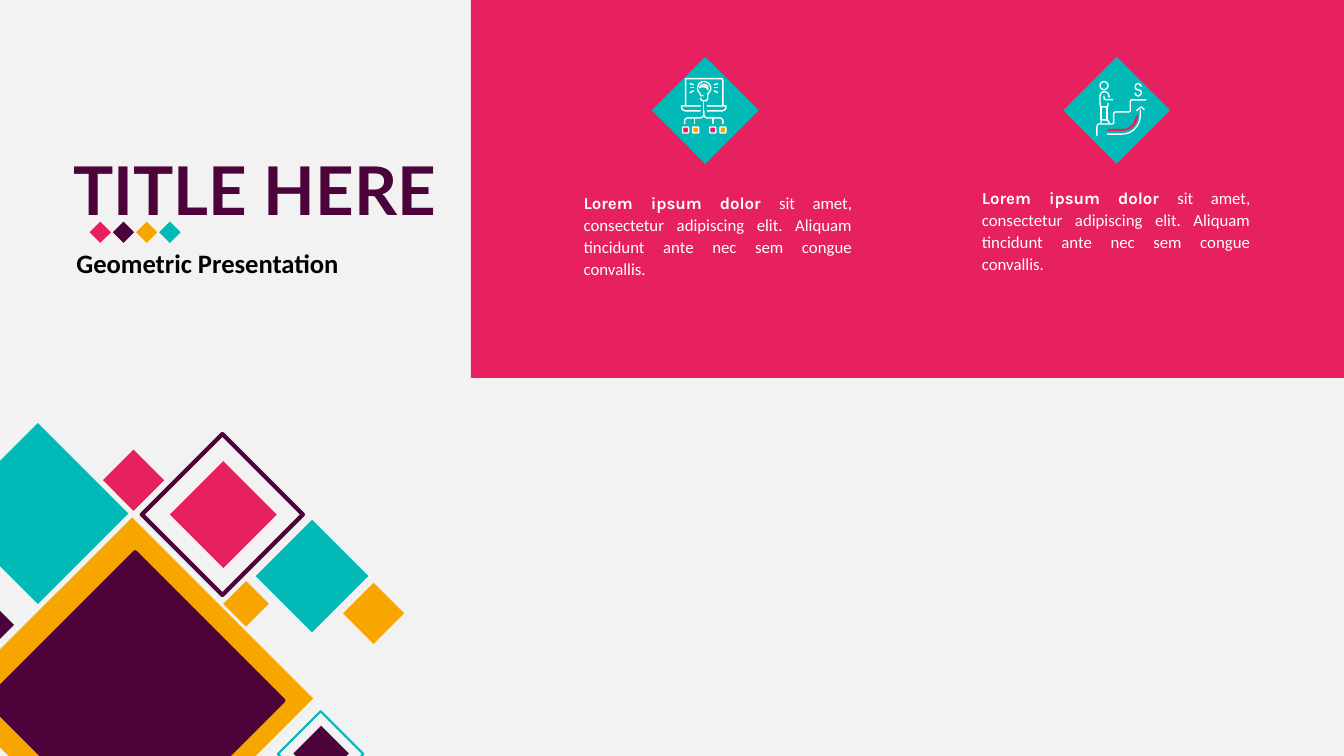
from dataclasses import dataclass
from typing import Optional

from lxml.etree import SubElement
from pptx import Presentation
from pptx.dml.color import RGBColor
from pptx.enum.shapes import MSO_CONNECTOR, MSO_SHAPE
from pptx.enum.text import MSO_AUTO_SIZE, PP_ALIGN
from pptx.oxml.ns import qn
from pptx.util import Inches, Pt

PINK, TEAL, ORANGE, PLUM = "E7205F", "01B9B7", "F7A600", "4C0339"
WHITE, BLACK, PALE = "FFFFFF", "000000", "F2F2F2"
CURVE_STEPS = 8


@dataclass
class Square:
    left: float
    top: float
    size: float
    fill: Optional[str] = None
    line: Optional[str] = None
    width: float = 1


@dataclass
class Stroke:
    """A start point, then (x, y) for lines or (x1, y1, x2, y2, x, y) for curves."""
    steps: list
    closed: bool = False
    fill: Optional[str] = None
    line: Optional[str] = WHITE


@dataclass
class Caption:
    left: float
    top: float


presentation = Presentation()
presentation.slide_width = Inches(13.33)
presentation.slide_height = Inches(7.5)
slide = presentation.slides.add_slide(presentation.slide_layouts[6])
shapes = slide.shapes


def color(value: str) -> RGBColor:
    return RGBColor.from_string(value)


def style(shape, fill: Optional[str], line: Optional[str], width: float = 1) -> None:
    shape.shadow.inherit = False
    if fill:
        shape.fill.solid()
        shape.fill.fore_color.rgb = color(fill)
    else:
        shape.fill.background()
    if line:
        shape.line.color.rgb = color(line)
        shape.line.width = Pt(width)
    else:
        shape.line.fill.background()


def add_preset(kind, left: float, top: float, width: float, height: float,
               fill: Optional[str] = None, line: Optional[str] = None, line_width: float = 1):
    shape = shapes.add_shape(kind, Inches(left), Inches(top), Inches(width), Inches(height))
    style(shape, fill, line, line_width)
    return shape


def add_diamond(square: Square) -> None:
    shape = add_preset(MSO_SHAPE.RECTANGLE, square.left, square.top, square.size, square.size,
                       square.fill, square.line, square.width)
    shape.rotation = 45


def add_line(x1: float, y1: float, x2: float, y2: float) -> None:
    connector = shapes.add_connector(MSO_CONNECTOR.STRAIGHT, Inches(x1), Inches(y1),
                                     Inches(x2), Inches(y2))
    connector.line.color.rgb = color(WHITE)
    connector.line.width = Pt(1)
    SubElement(connector.element.spPr, qn("a:effectLst"))


def add_stroke(stroke: Stroke) -> None:
    points = [stroke.steps[0]]
    for step in stroke.steps[1:]:
        if len(step) == 2:
            points.append(step)
            continue
        controls = [points[-1], step[:2], step[2:4], step[4:]]
        for index in range(1, CURVE_STEPS + 1):
            t = index / CURVE_STEPS
            weights = ((1 - t) ** 3, 3 * t * (1 - t) ** 2, 3 * t * t * (1 - t), t ** 3)
            points.append(tuple(sum(w * c[axis] for w, c in zip(weights, controls))
                                for axis in (0, 1)))
    emu_points = [(Inches(x), Inches(y)) for x, y in points]
    builder = shapes.build_freeform(*emu_points[0])
    builder.add_line_segments(emu_points[1:], close=stroke.closed)
    style(builder.convert_to_shape(), stroke.fill, stroke.line)


def add_text(left: float, top: float, width: float, height: float, wrap: bool):
    frame = shapes.add_textbox(Inches(left), Inches(top), Inches(width), Inches(height)).text_frame
    frame.word_wrap = wrap
    frame.auto_size = MSO_AUTO_SIZE.SHAPE_TO_FIT_TEXT
    return frame.paragraphs[0]


def add_heading(left: float, top: float, width: float, height: float,
                text: str, size: float, font: str, ink: str) -> None:
    paragraph = add_text(left, top, width, height, wrap=False)
    paragraph.text = text
    paragraph.font.name, paragraph.font.size, paragraph.font.bold = font, Pt(size), True
    paragraph.font.color.rgb = color(ink)


def add_caption(caption: Caption) -> None:
    paragraph = add_text(caption.left, caption.top, 2.86, 0.98, wrap=True)
    paragraph.alignment, paragraph.line_spacing = PP_ALIGN.JUSTIFY, 1.1
    paragraph.font.size = Pt(12)
    paragraph.font.color.rgb = color(WHITE)
    for text, font, bold in (
            ("Lorem ipsum dolor ", "Karla", True),
            ("sit amet, consectetur adipiscing elit. Aliquam tincidunt ante nec sem congue "
             "convallis.", "Calibri", False)):
        run = paragraph.add_run()
        run.text, run.font.name, run.font.bold = text, font, bold


def draw_stairs_icon() -> None:
    # Dollar sign
    add_stroke(Stroke([(11.26, 0.92), (11.26, 0.94, 11.27, 0.95, 11.29, 0.95),
                       (11.3, 0.95, 11.32, 0.94, 11.32, 0.92), (11.32, 0.9, 11.31, 0.9, 11.29, 0.89),
                       (11.27, 0.89, 11.26, 0.88, 11.26, 0.86), (11.26, 0.85, 11.27, 0.83, 11.29, 0.83),
                       (11.3, 0.83, 11.32, 0.85, 11.32, 0.86)]))
    for top in (0.82, 0.95):
        add_line(11.29, top, 11.29, top + 0.01)
    # Steps
    for index in range(3):
        x, y = 10.88 + 0.165 * index, 1.35 - 0.12 * index
        add_stroke(Stroke([(x, y), (x, y - 0.09), (x, y - 0.11, x + 0.01, y - 0.12, x + 0.02, y - 0.12),
                           (x + 0.16, y - 0.12)]))
    # Climber
    add_preset(MSO_SHAPE.OVAL, 10.91, 0.81, 0.08, 0.08, line=WHITE)
    for x, bottom in ((10.98, 1.2), (10.92, 1.19)):
        add_line(x, 1.06, x, bottom)
    add_stroke(Stroke([(10.95, 0.95), (10.95, 0.97), (10.95, 0.98, 10.96, 0.99, 10.98, 0.99),
                       (11.04, 0.99)]))
    add_stroke(Stroke([(10.92, 1.23), (10.92, 1.19), (10.97, 1.19), (10.99, 1.19, 11, 1.21, 11, 1.23)]))
    add_stroke(Stroke([(11, 0.97), (11, 0.96), (11, 0.93, 10.98, 0.91, 10.95, 0.91),
                       (10.93, 0.91, 10.91, 0.93, 10.91, 0.96), (10.91, 1),
                       (10.91, 1.02, 10.91, 1.04, 10.92, 1.06), (10.98, 1.06),
                       (10.99, 1.05, 10.99, 1.04, 10.99, 1.02)]))
    # Rising arrow
    add_stroke(Stroke([(11.13, 1.3), (10.98, 1.3), (10.98, 1.29, 10.99, 1.28, 11, 1.28), (11.13, 1.28),
                       (11.2, 1.28, 11.25, 1.23, 11.26, 1.16), (11.27, 1.15, 11.28, 1.14, 11.29, 1.14),
                       (11.29, 1.23, 11.22, 1.3, 11.13, 1.3)], closed=True, fill=PINK, line=None))
    add_stroke(Stroke([(10.98, 1.33), (11.13, 1.33), (11.23, 1.33, 11.31, 1.25, 11.31, 1.14),
                       (11.31, 1.09)]))
    add_stroke(Stroke([(11.27, 1.1), (11.32, 1.06), (11.35, 1.09)]))


def draw_laptop_icon() -> None:
    center = 6.98
    # Bulb
    add_stroke(Stroke([(6.95, 0.97), (6.95, 0.99, 6.96, 1, 6.98, 1), (6.99, 1),
                       (7.01, 1, 7.02, 0.99, 7.02, 0.97), (7.02, 0.95), (7.02, 0.94, 7.02, 0.93, 7.03, 0.92),
                       (7.04, 0.91, 7.05, 0.89, 7.05, 0.88), (7.05, 0.84, 7.02, 0.81, 6.98, 0.81),
                       (6.95, 0.81, 6.92, 0.84, 6.92, 0.87), (6.92, 0.89, 6.92, 0.91, 6.94, 0.92),
                       (6.94, 0.93, 6.95, 0.94, 6.95, 0.95), (6.98, 0.95)]))
    add_stroke(Stroke([(6.97, 0.86), (6.99, 0.86, 7.01, 0.87, 7.02, 0.88), (7.02, 0.89),
                       (7.02, 0.87, 7.02, 0.86, 7.01, 0.85), (7, 0.84, 6.99, 0.84, 6.98, 0.84),
                       (6.96, 0.84, 6.95, 0.85, 6.94, 0.87), (6.95, 0.86, 6.96, 0.86, 6.97, 0.86)],
                      closed=True, fill=ORANGE))
    # Screen
    add_stroke(Stroke([(7.17, 1.05), (7.17, 0.8), (7.17, 0.79, 7.16, 0.78, 7.16, 0.78), (6.81, 0.78),
                       (6.8, 0.78, 6.8, 0.79, 6.8, 0.8), (6.8, 1.05)]))
    add_line(center, 1, center, 1.1)
    # Mirrored rays, keyboard halves and branches
    for side in (-1, 1):
        def x(offset: float) -> float:
            return center + side * offset

        for start, end in ((0.87, 0.87), (0.9, 0.92), (0.84, 0.83)):
            add_line(x(0.1), start, x(0.14), end)
        add_stroke(Stroke([(x(0.03), 1.05), (x(0.22), 1.05), (x(0.22), 1.07),
                           (x(0.22), 1.08, x(0.2), 1.1, x(0.18), 1.1), (x(0.03), 1.1)]))
        add_stroke(Stroke([(center, 1.1), (center, 1.14), (center, 1.15, x(0.02), 1.17, x(0.03), 1.17),
                           (x(0.15), 1.17), (x(0.17), 1.17, x(0.19), 1.18, x(0.19), 1.2),
                           (x(0.19), 1.23)]))
        add_line(x(0.09), 1.17, x(0.09), 1.23)
    # Branch ends
    for left, fill in ((6.77, PINK), (6.87, ORANGE), (7.04, PINK), (7.14, ORANGE)):
        add_preset(MSO_SHAPE.ROUNDED_RECTANGLE, left, 1.26, 0.06, 0.06, fill, WHITE)


# Background and corner diamonds
slide.background.fill.solid()
slide.background.fill.fore_color.rgb = color(PALE)
for corner_square in (
        Square(0.04, 5.66, 2.54, ORANGE), Square(-1.02, 5.72, 0.96, PLUM),
        Square(-0.26, 4.46, 1.27, TEAL), Square(1.64, 4.54, 1.13, line=PLUM, width=3),
        Square(2.28, 5.83, 0.32, ORANGE), Square(3.49, 5.87, 0.43, ORANGE),
        Square(1.11, 4.55, 0.43, PINK), Square(2.7, 5.32, 0.79, TEAL),
        Square(2.88, 7.18, 0.6, line=TEAL, width=1.5), Square(2.99, 7.28, 0.39, PLUM),
        Square(0.3, 5.91, 2.08, PLUM, PLUM, 3), Square(1.84, 4.73, 0.75, PINK)):
    add_diamond(corner_square)

# Title and subtitle
add_heading(0.63, 1.42, 3.93, 0.91, "TITLE HERE", 48, "Lato", PLUM)
add_heading(0.66, 2.4, 2.84, 0.42, "Geometric Presentation", 19, "Calibri", BLACK)
for position, accent in enumerate((PINK, PLUM, ORANGE, TEAL)):
    add_diamond(Square(0.92 + 0.23 * position, 2.23, 0.15, accent))

# Panel with captions and icons
add_preset(MSO_SHAPE.RECTANGLE, 4.67, 0, 8.66, 3.75, PINK)
for panel_caption in (Caption(5.69, 1.84), Caption(9.64, 1.79)):
    add_caption(panel_caption)
for badge_left in (6.62, 10.7):
    add_diamond(Square(badge_left, 0.72, 0.75, TEAL))
draw_stairs_icon()
draw_laptop_icon()

presentation.save("out.pptx")
